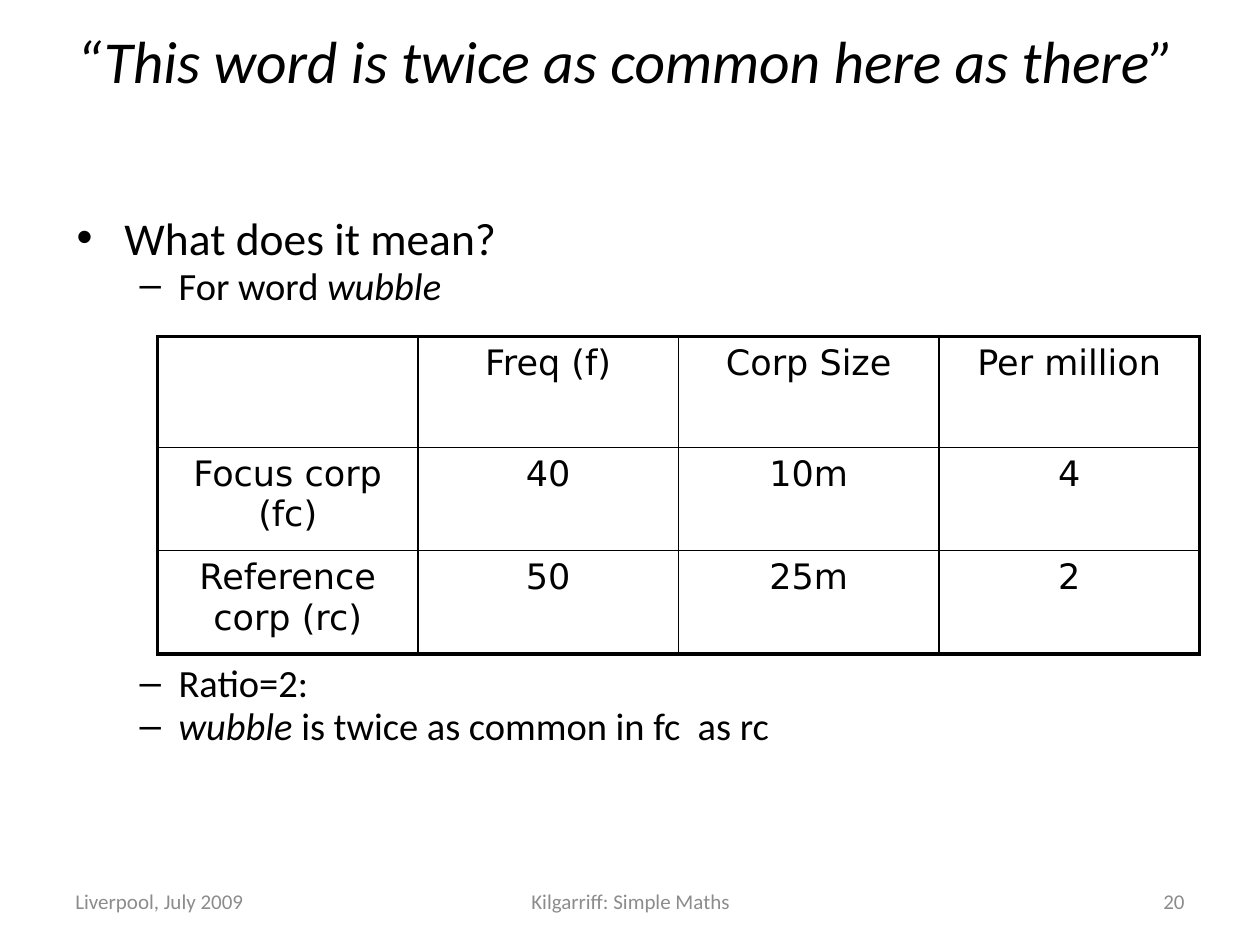
from dataclasses import dataclass
from lxml.etree import Element, SubElement
from pptx import Presentation
from pptx.dml.color import RGBColor
from pptx.enum.text import MSO_ANCHOR as Anchor, PP_ALIGN as Align
from pptx.oxml.ns import qn
from pptx.util import Inches, Pt

COLORS = {"ink": "000000", "footer": "8C8C8C"}


@dataclass
class Span:
    text: str
    italic: bool = False


@dataclass
class Line:
    spans: list[Span]
    size: float
    level: int = 0
    bullet: str = ""
    before: float = 0


@dataclass
class Footer:
    text: str
    left: float
    width: float
    align: Align


LINES = [
    Line([Span("“This word is twice as common here as there”", True)], 34),
    Line([Span("What does it mean?")], 26, bullet="•", before=72),
    Line([Span("For word "), Span("wubble", True)], 22, 1, "–", 3.5),
    Line([Span("Ratio=2:")], 22, 1, "–", 206),
    Line([Span("wubble ", True), Span("is twice as common in fc  as rc")], 22, 1, "–", 3.5),
]
INDENTS = [(0.38, 0.38), (0.81, 0.31)]
FOOTERS = [
    Footer("Liverpool, July 2009", 0.5, 2.33, Align.LEFT),
    Footer("Kilgarriff: Simple Maths", 3.42, 3.17, Align.CENTER),
    Footer("20", 7.17, 2.33, Align.RIGHT),
]
ROWS = [
    ["", "Freq (f)", "Corp Size", "Per million"],
    ["Focus corp (fc)", "40", "10m", "4"],
    ["Reference corp (rc)", "50", "25m", "2"],
]
ROW_HEIGHTS = [0.88, 0.82, 0.82]
TABLE_WIDTH = 8.27


def write(para, text: str, *, size: float, font: str = "Calibri",
          color: str = "ink", italic: bool = False, align: Align = Align.LEFT) -> None:
    """Append a formatted span to a paragraph."""
    para.alignment = align
    span = para.add_run()
    span.text = text
    span.font.size = Pt(size)
    span.font.name = font
    span.font.italic = italic
    span.font.color.rgb = RGBColor.from_string(COLORS[color])


def add_frame(page, left: float, top: float, width: float, height: float, anchor: Anchor):
    """Add a wrapping text box and return its text frame."""
    box = page.shapes.add_textbox(Inches(left), Inches(top), Inches(width), Inches(height))
    frame = box.text_frame
    frame.word_wrap = True
    frame.vertical_anchor = anchor
    return frame


def add_line(para, line: Line) -> None:
    """Fill a paragraph with a line of the outline."""
    para.level = line.level
    para.line_spacing = 0.8
    para.space_before = Pt(line.before)
    margin, hanging = INDENTS[line.level]
    properties = para._p.get_or_add_pPr()
    properties.set("marL", str(Inches(margin)))
    properties.set("indent", str(-Inches(hanging)))
    if line.bullet:
        SubElement(properties, qn("a:buFont"), typeface="Arial")
        SubElement(properties, qn("a:buChar"), char=line.bullet)
    else:
        SubElement(properties, qn("a:buNone"))
    for span in line.spans:
        write(para, span.text, size=line.size, italic=span.italic)


def set_borders(cell, outer: dict[str, bool]) -> None:
    """Draw thick outer and thin inner borders around a cell."""
    properties = cell._tc.get_or_add_tcPr()
    for position, (side, is_outer) in enumerate(outer.items()):
        border = Element(qn(f"a:ln{side}"), w=str(Pt(2.25 if is_outer else 1)))
        fill = SubElement(border, qn("a:solidFill"))
        SubElement(fill, qn("a:srgbClr"), val=COLORS["ink"])
        properties.insert(position, border)


def add_frequency_table(page) -> None:
    """Add the table of corpus frequencies."""
    last_row, last_column = len(ROWS) - 1, len(ROWS[0]) - 1
    table = page.shapes.add_table(
        len(ROWS), len(ROWS[0]), Inches(1.25), Inches(2.67),
        Inches(TABLE_WIDTH), Inches(sum(ROW_HEIGHTS))).table
    table.first_row = table.horz_banding = False
    for row, height in zip(table.rows, ROW_HEIGHTS):
        row.height = Inches(height)
    for r, texts in enumerate(ROWS):
        for c, text in enumerate(texts):
            cell = table.cell(r, c)
            cell.fill.background()
            set_borders(cell, {"L": c == 0, "R": c == last_column,
                               "T": r == 0, "B": r == last_row})
            if text:
                write(cell.text_frame.paragraphs[0], text, size=20,
                      font="DejaVu Sans", align=Align.CENTER)


def main() -> None:
    """Build the slide and save it."""
    deck = Presentation()
    deck.slide_width, deck.slide_height = Inches(10), Inches(7.5)
    page = deck.slides.add_slide(deck.slide_layouts[6])
    for footer in FOOTERS:
        frame = add_frame(page, footer.left, 6.95, footer.width, 0.4, Anchor.MIDDLE)
        write(frame.paragraphs[0], footer.text, size=12, color="footer", align=footer.align)
    body = add_frame(page, 0.51, 0.25, 9.07, 6.26, Anchor.TOP)
    for index, line in enumerate(LINES):
        add_line(body.add_paragraph() if index else body.paragraphs[0], line)
    add_frequency_table(page)
    deck.save("out.pptx")


if __name__ == "__main__":
    main()
